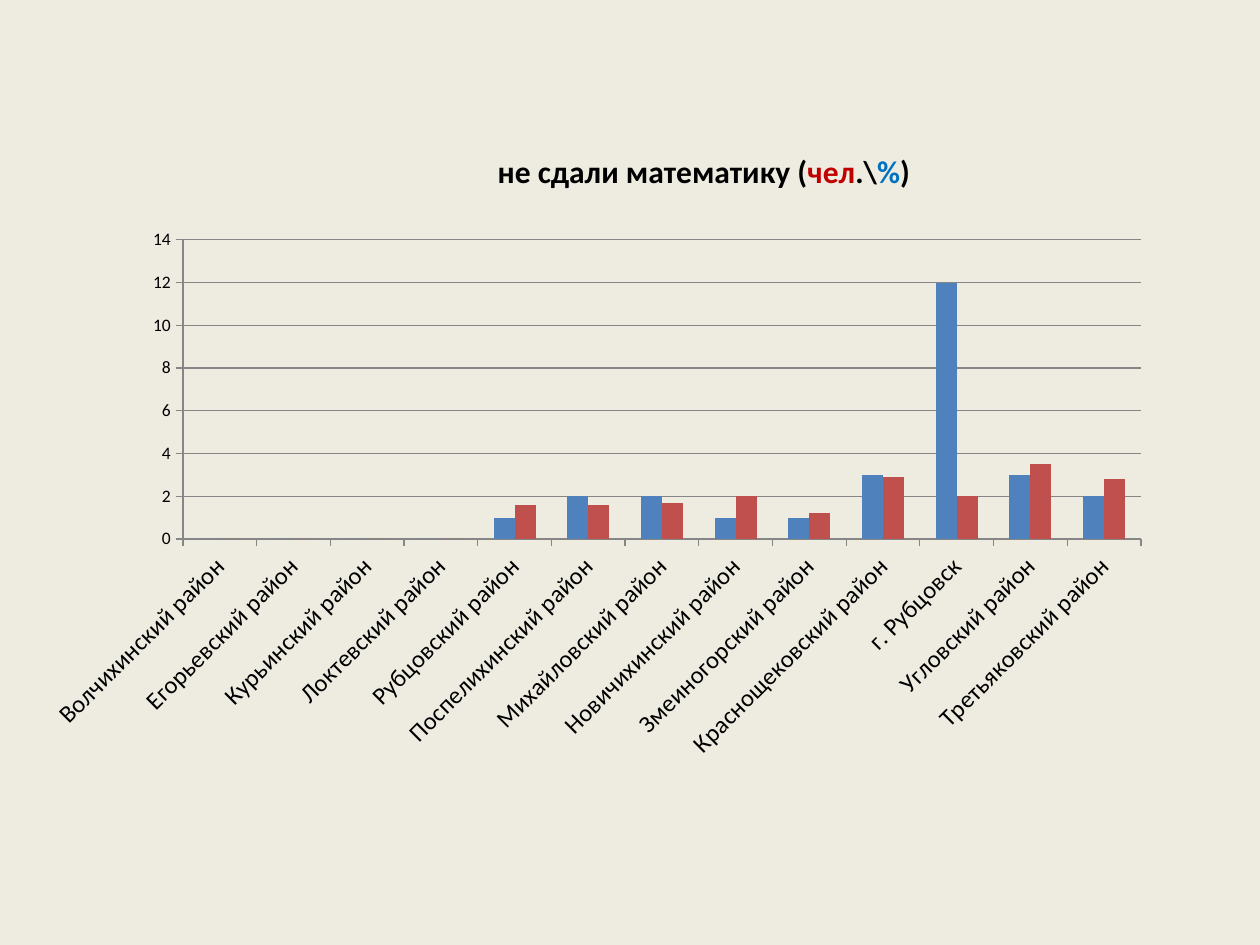
import dataclasses

import lxml.etree
import pptx
import pptx.chart.data
import pptx.dml.color
import pptx.enum.chart
import pptx.oxml.ns
import pptx.util

Pt = pptx.util.Pt
Rgb = pptx.dml.color.RGBColor.from_string


@dataclasses.dataclass(frozen=True)
class Theme:
    face: str = "Calibri"
    back: str = "EEECE1"
    ink: str = "000000"
    red: str = "C00000"
    blue: str = "0070C0"
    grid: str = "868686"
    bars: tuple = ("4F81BD", "C0504D")
    base: int = 10
    label: int = 14
    head: int = 18


class Deck:
    """Hold the theme and the current slide, and draw each kind of element."""

    def __init__(self, theme):
        self.theme = theme
        self.show = pptx.Presentation()
        self.show.slide_width, self.show.slide_height = Pt(720), Pt(540)
        self.slide = self.show.slides.add_slide(self.show.slide_layouts[6])
        fill = self.slide.background.fill
        fill.solid()
        fill.fore_color.rgb = Rgb(theme.back)

    def font(self, font, size, color, bold=False):
        font.name, font.size, font.bold = self.theme.face, Pt(size), bold
        font.color.rgb = Rgb(color)

    def place(self, host, index, **parts):
        tag = pptx.oxml.ns.qn
        for old in host.findall(tag("c:layout")):
            host.remove(old)
        frame = lxml.etree.Element(tag("c:layout"))
        manual = lxml.etree.SubElement(frame, tag("c:manualLayout"))
        for name, value in parts.items():
            lxml.etree.SubElement(manual, tag("c:" + name)).set("val", str(value))
        host.insert(index, frame)

    def chart(self, box, area, cats, rows):
        data = pptx.chart.data.CategoryChartData(number_format="0")
        data.categories = cats
        for name, values in rows.items():
            data.add_series(name, values)
        kind = pptx.enum.chart.XL_CHART_TYPE.COLUMN_CLUSTERED
        chart = self.slide.shapes.add_chart(kind, *map(Pt, box), data).chart
        self.font(chart.font, self.theme.base, self.theme.ink)
        chart.has_legend = False
        plot = chart.plots[0]
        plot.gap_width, plot.overlap, plot.vary_by_categories = 150, 0, False
        for series, color in zip(plot.series, self.theme.bars):
            series.format.fill.solid()
            series.format.fill.fore_color.rgb = Rgb(color)
        left, top, width, height = area
        wide, high = box[2:]
        self.place(chart._chartSpace.chart.plotArea, 0, layoutTarget="inner",
                   xMode="edge", yMode="edge", x=left / wide, y=top / high,
                   w=width / wide, h=height / high)
        self.axes(chart)
        return chart

    def line(self, line):
        line.color.rgb = Rgb(self.theme.grid)
        line.width = Pt(0.75)

    def axes(self, chart):
        cat, val = chart.category_axis, chart.value_axis
        for axis, size in ((cat, self.theme.label), (val, self.theme.base)):
            axis.major_tick_mark = pptx.enum.chart.XL_TICK_MARK.OUTSIDE
            axis.minor_tick_mark = pptx.enum.chart.XL_TICK_MARK.NONE
            self.font(axis.tick_labels.font, size, self.theme.ink)
            self.line(axis.format.line)
        cat._element.txPr.bodyPr.set("rot", "-2700000")
        val.minimum_scale, val.maximum_scale, val.major_unit = 0, 14, 2
        val.has_major_gridlines = True
        self.line(val.major_gridlines.format.line)
        val.tick_labels.number_format = "0"
        val.tick_labels.number_format_is_linked = False

    def title(self, chart, runs):
        title = chart.chart_title
        para = title.text_frame.paragraphs[0]
        for text, color in runs:
            run = para.add_run()
            run.text = text
            self.font(run.font, self.theme.head, color, True)
        title.include_in_layout = False
        self.place(title._element, 1, xMode="edge", yMode="edge", x=0.41, y=0)


def main():
    theme = Theme()
    deck = Deck(theme)
    towns = ["Волчихинский район", "Егорьевский район", "Курьинский район",
             "Локтевский район", "Рубцовский район", "Поспелихинский район",
             "Михайловский район", "Новичихинский район", "Змеиногорский район",
             "Краснощековский район", "г. Рубцовск", "Угловский район",
             "Третьяковский район"]
    rows = {
        "Series 1": [0, 0, 0, 0, 1, 2, 2, 1, 1, 3, 12, 3, 2],
        "Series 2": [0, 0, 0, 0, 1.6, 1.6, 1.7, 2, 1.2, 2.9, 2, 3.5, 2.8],
    }
    box, area = (16.56, 84.24, 648, 356.4), (88, 52.8, 547.5, 171)
    chart = deck.chart(box, area, towns, rows)
    deck.title(chart, [("не сдали математику (", theme.ink), ("чел", theme.red),
                       (".\\", theme.ink), ("%", theme.blue), (")", theme.ink)])
    deck.show.save("out.pptx")


if __name__ == "__main__":
    main()
